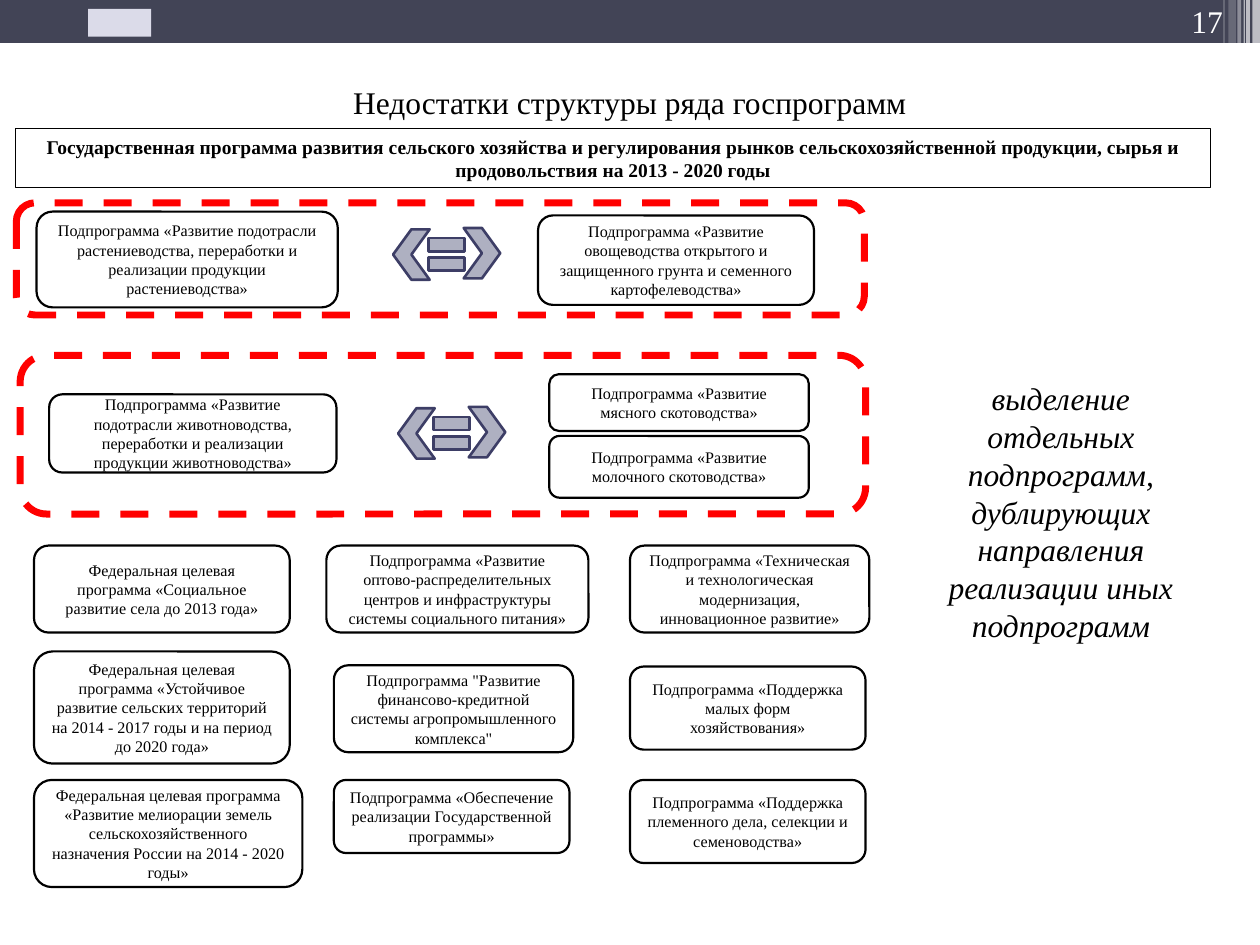
from dataclasses import dataclass

import pptx
import pptx.dml.color
import pptx.enum.shapes
import pptx.enum.text
import pptx.oxml.ns
import pptx.util
from lxml import etree
from pptx.enum.shapes import MSO_SHAPE
from pptx.util import Inches

FONT = "Times New Roman"
COLORS = {
    "header": "424456",
    "white": "FFFFFF",
    "black": "000000",
    "emblem": "DBDBE9",
    "sign": "AEB0C1",
    "sign_edge": "3D3E66",
    "frame": "FF0000",
}


@dataclass(frozen=True)
class Area:
    left: float
    top: float
    width: float
    height: float


@dataclass(frozen=True)
class Stripe:
    left: float
    width: float
    height: float
    opacity: int


@dataclass(frozen=True)
class Program:
    area: Area
    text: str


STRIPES = [
    Stripe(9.94, 0.06, 0.68, 65),
    Stripe(9.89, 0.03, 0.68, 65),
    Stripe(9.87, 0.01, 0.68, 60),
    Stripe(9.82, 0.03, 0.68, 40),
    Stripe(9.75, 0.06, 0.64, 20),
    Stripe(9.71, 0.01, 0.64, 30),
]
FRAMES = [Area(0.13, 1.61, 6.73, 0.89), Area(0.16, 2.82, 6.71, 1.26)]
EQUIVALENCES = [(3.12, 1.8), (3.16, 3.22)]
PROGRAMS = [
    Program(Area(0.29, 1.68, 2.39, 0.76),
            "Подпрограмма «Развитие подотрасли растениеводства, переработки и "
            "реализации продукции растениеводства»"),
    Program(Area(4.27, 1.71, 2.19, 0.71),
            "Подпрограмма «Развитие овощеводства открытого и защищенного грунта "
            "и семенного картофелеводства»"),
    Program(Area(0.39, 3.13, 2.28, 0.62),
            "Подпрограмма «Развитие подотрасли животноводства, переработки и "
            "реализации продукции животноводства»"),
    Program(Area(4.36, 2.97, 2.06, 0.45), "Подпрограмма «Развитие мясного скотоводства»"),
    Program(Area(4.36, 3.46, 2.06, 0.49), "Подпрограмма «Развитие молочного скотоводства»"),
    Program(Area(0.27, 4.33, 2.03, 0.69),
            "Федеральная целевая программа «Социальное развитие села до 2013 года»"),
    Program(Area(2.59, 4.33, 2.08, 0.69),
            "Подпрограмма «Развитие оптово-распределительных центров и "
            "инфраструктуры системы социального питания»"),
    Program(Area(5, 4.33, 1.9, 0.69),
            "Подпрограмма «Техническая и технологическая модернизация, "
            "инновационное развитие»"),
    Program(Area(0.27, 5.17, 2.03, 0.89),
            "Федеральная целевая программа «Устойчивое развитие сельских "
            "территорий на 2014 - 2017 годы и на период до 2020 года»"),
    Program(Area(2.65, 5.28, 1.9, 0.69),
            'Подпрограмма "Развитие финансово-кредитной системы '
            'агропромышленного комплекса"'),
    Program(Area(5, 5.29, 1.87, 0.66), "Подпрограмма «Поддержка малых форм хозяйствования»"),
    Program(Area(0.27, 6.19, 2.13, 0.85),
            "Федеральная целевая программа «Развитие мелиорации земель "
            "сельскохозяйственного назначения России на 2014 - 2020 годы»"),
    Program(Area(2.65, 6.19, 1.87, 0.58),
            "Подпрограмма «Обеспечение реализации Государственной программы»"),
    Program(Area(5, 6.19, 1.87, 0.66),
            "Подпрограмма «Поддержка племенного дела, селекции и семеноводства»"),
]


def rgb(name: str) -> pptx.dml.color.RGBColor:
    return pptx.dml.color.RGBColor.from_string(COLORS[name])


def bounds(area: Area) -> tuple:
    return tuple(Inches(v) for v in (area.left, area.top, area.width, area.height))


def add_figure(slide, kind, area: Area, fill: str | None = None,
               edge: str | None = None, weight: float = 1):
    figure = slide.shapes.add_shape(kind, *bounds(area))
    figure.shadow.inherit = False
    if fill:
        figure.fill.solid()
        figure.fill.fore_color.rgb = rgb(fill)
    else:
        figure.fill.background()
    if edge:
        figure.line.color.rgb = rgb(edge)
        figure.line.width = pptx.util.Pt(weight)
    else:
        figure.line.fill.background()
    return figure


def write(holder, text: str, size: float, color: str = "black", bold: bool = False,
          italic: bool = False, middle: bool = False, inset: float | None = None) -> None:
    frame = holder.text_frame
    frame.word_wrap = True
    frame.auto_size = pptx.enum.text.MSO_AUTO_SIZE.NONE
    anchors = pptx.enum.text.MSO_ANCHOR
    frame.vertical_anchor = anchors.MIDDLE if middle else anchors.TOP
    if inset is not None:
        frame.margin_left = frame.margin_right = Inches(inset)
        frame.margin_top = frame.margin_bottom = Inches(inset)
    paragraph = frame.paragraphs[0]
    paragraph.text = text
    paragraph.alignment = pptx.enum.text.PP_ALIGN.CENTER
    font = paragraph.font
    font.name, font.size = FONT, pptx.util.Pt(size)
    font.bold, font.italic = bold, italic
    font.color.rgb = rgb(color)


def add_stripe(slide, stripe: Stripe) -> None:
    area = Area(stripe.left, 0, stripe.width, stripe.height)
    figure = add_figure(slide, MSO_SHAPE.RECTANGLE, area, "white")
    qn = pptx.oxml.ns.qn
    tone = figure.fill._xPr.find(qn("a:solidFill")).find(qn("a:srgbClr"))
    etree.SubElement(tone, qn("a:alpha"), val=str(stripe.opacity * 1000))


def add_header(slide) -> None:
    add_figure(slide, MSO_SHAPE.RECTANGLE, Area(0, 0, 10, 0.34), "header")
    for stripe in STRIPES:
        add_stripe(slide, stripe)
    add_figure(slide, MSO_SHAPE.RECTANGLE, Area(0.7, 0.07, 0.5, 0.22), "emblem")
    page_number = slide.shapes.add_textbox(*bounds(Area(9.34, 0.02, 0.48, 0.3)))
    write(page_number, "17", 18, "white", inset=0)


def add_frame(slide, area: Area) -> None:
    frame = add_figure(slide, MSO_SHAPE.ROUNDED_RECTANGLE, area, edge="frame", weight=4)
    frame.line.dash_style = pptx.enum.dml.MSO_LINE.DASH


def add_program(slide, program: Program) -> None:
    box = add_figure(slide, MSO_SHAPE.ROUNDED_RECTANGLE, program.area,
                     edge="black", weight=1.25)
    write(box, program.text, 9.2, middle=True)


def add_equivalence(slide, left: float, top: float) -> None:
    style = ("sign", "sign_edge", 1.5)
    add_figure(slide, MSO_SHAPE.MATH_EQUAL, Area(left + 0.23, top, 0.39, 0.44), *style)
    add_figure(slide, MSO_SHAPE.CHEVRON, Area(left + 0.56, top + 0.01, 0.29, 0.4), *style)
    back = add_figure(slide, MSO_SHAPE.CHEVRON, Area(left, top + 0.02, 0.29, 0.4), *style)
    back.rotation = 180


def main() -> None:
    deck = pptx.Presentation()
    deck.slide_width, deck.slide_height = Inches(10), Inches(7.5)
    slide = deck.slides.add_slide(deck.slide_layouts[5])
    add_header(slide)

    title = slide.shapes.title
    title.left, title.top, title.width, title.height = bounds(Area(0, 0.61, 10, 0.4))
    write(title, "Недостатки структуры ряда госпрограмм", 18)

    state_program = add_figure(slide, MSO_SHAPE.RECTANGLE, Area(0.12, 1.02, 9.49, 0.47),
                               edge="black", weight=0.5)
    write(state_program,
          "Государственная программа развития сельского хозяйства и регулирования "
          "рынков сельскохозяйственной продукции, сырья и продовольствия на "
          "2013 - 2020 годы", 11.1, bold=True, middle=True)

    for area in FRAMES:
        add_frame(slide, area)
    for program in PROGRAMS:
        add_program(slide, program)
    for left, top in EQUIVALENCES:
        add_equivalence(slide, left, top)

    conclusion = slide.shapes.add_textbox(*bounds(Area(7.36, 2.97, 2.12, 2.19)))
    write(conclusion,
          "выделение отдельных подпрограмм, дублирующих направления реализации "
          "иных подпрограмм", 18, italic=True, inset=0.04)
    deck.save("out.pptx")


if __name__ == "__main__":
    main()
